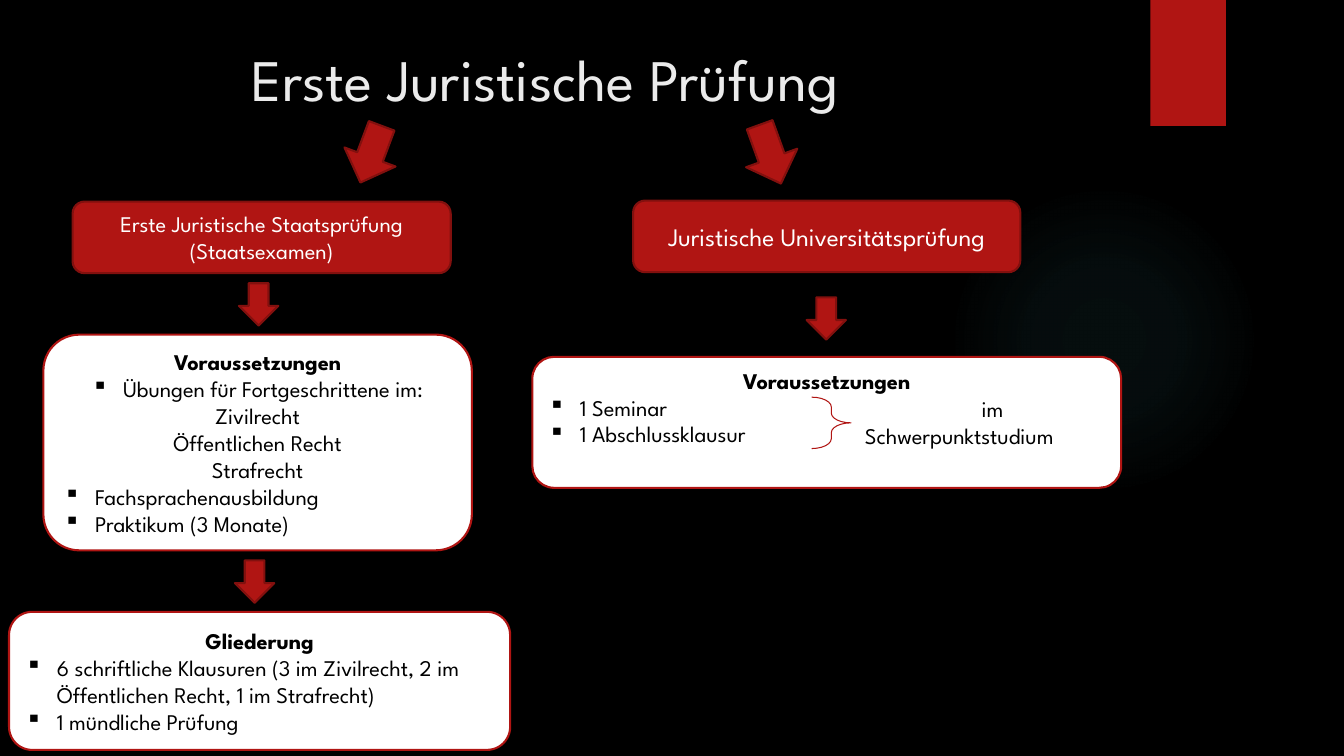
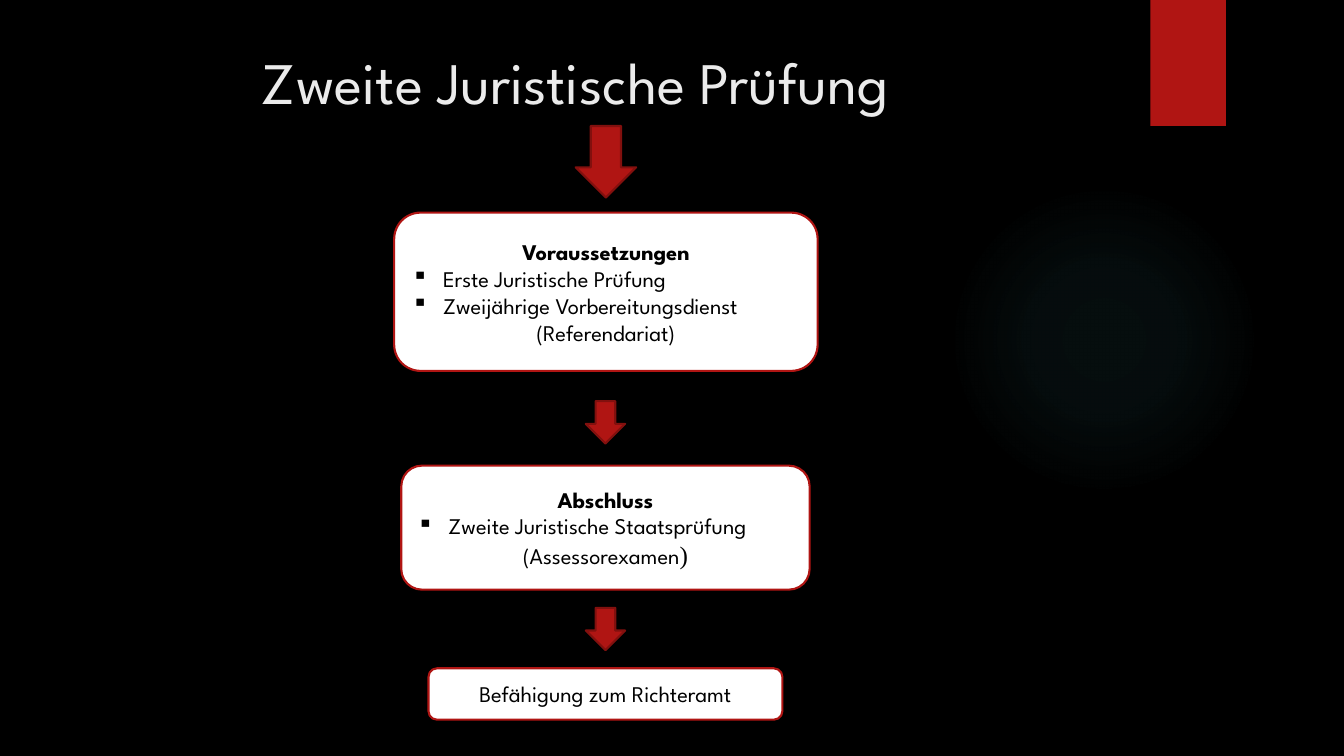
from dataclasses import dataclass

from lxml import etree
from pptx import Presentation
from pptx.dml.color import RGBColor
from pptx.enum.shapes import MSO_SHAPE
from pptx.enum.text import MSO_ANCHOR, PP_ALIGN
from pptx.oxml.ns import qn
from pptx.util import Emu, Pt

PX = 9144  # 100 px to the inch
FONT = "League Spartan"
SERIF = "Times New Roman"
INDENT = 31
COLORS = {
    "back": "000000",
    "title": "EBEBEB",
    "red": "B01513",
    "edge": "82100E",
    "white": "FFFFFF",
    "ink": "000000",
    "glow": "50B9C1",
}
GLOW = ((0, 7), (36, 6), (69, 0))  # position and opacity in percent
LEFT, CENTER = PP_ALIGN.LEFT, PP_ALIGN.CENTER
TOP, MIDDLE = MSO_ANCHOR.TOP, MSO_ANCHOR.MIDDLE
OVAL, RECT = MSO_SHAPE.OVAL, MSO_SHAPE.RECTANGLE
ROUND, DOWN = MSO_SHAPE.ROUNDED_RECTANGLE, MSO_SHAPE.DOWN_ARROW
BRACE = MSO_SHAPE.RIGHT_BRACE


@dataclass(frozen=True)
class Area:
    left: int
    top: int
    width: int
    height: int

    def emu(self) -> list[Emu]:
        return [Emu(n * PX) for n in (self.left, self.top, self.width, self.height)]


@dataclass(frozen=True)
class Line:
    text: str
    align: PP_ALIGN = CENTER
    bullet: bool = False
    bold: bool = False
    tail: str = ""  # closing text in the larger serif font


@dataclass(frozen=True)
class Box:
    area: Area
    lines: tuple[Line, ...]
    fill: str = "white"
    edge: str = "red"
    ink: str = "ink"
    size: int = 16
    bottom: int = 5


@dataclass(frozen=True)
class Arrow:
    left: int
    top: int
    width: int = 39
    height: int = 42
    turn: float = 0


@dataclass(frozen=True)
class Page:
    title: str
    left: int
    top: int
    arrows: tuple[Arrow, ...]
    boxes: tuple[Box, ...]


def head(text: str) -> Line:
    return Line(text, bold=True)


def item(text: str, align: PP_ALIGN = LEFT) -> Line:
    return Line(text, align, bullet=True)


def banner(area: Area, *texts: str, size: int = 16) -> Box:
    return Box(area, tuple(map(Line, texts)), "red", "edge", "white", size)


FIRST = Page(
    "Erste Juristische Prüfung", 240, 37,
    (
        Arrow(341, 123, 54, 60, 20.5),
        Arrow(737, 122, 54, 62, 340.1),
        Arrow(237, 281),
        Arrow(800, 295),
        Arrow(233, 556),
    ),
    (
        banner(Area(72, 200, 375, 71), "Erste Juristische Staatsprüfung", "(Staatsexamen)"),
        banner(Area(628, 199, 384, 71), "Juristische Universitätsprüfung", size=18),
        Box(Area(43, 332, 425, 214), (
            head("Voraussetzungen"),
            item("Übungen für Fortgeschrittene im:", CENTER),
            Line("Zivilrecht"),
            Line("Öffentlichen Recht"),
            Line("Strafrecht"),
            item("Fachsprachenausbildung"),
            item("Praktikum (3 Monate)"),
        )),
        Box(Area(9, 607, 497, 137), (
            head("Gliederung"),
            item("6 schriftliche Klausuren (3 im Zivilrecht, 2 im "
                 "Öffentlichen Recht, 1 im Strafrecht)"),
            item("1 mündliche Prüfung"),
        )),
        Box(Area(528, 354, 584, 130), (
            head("Voraussetzungen"),
            item("1 Seminar"),
            item("1 Abschlussklausur"),
        ), bottom=35),
    ),
)
SECOND = Page(
    "Zweite Juristische Prüfung", 250, 40,
    (Arrow(571, 125, 60, 71), Arrow(581, 398), Arrow(581, 603)),
    (
        Box(Area(391, 211, 420, 157), (
            head("Voraussetzungen"),
            item("Erste Juristische Prüfung"),
            item("Zweijährige Vorbereitungsdienst"),
            Line("(Referendariat)"),
        )),
        Box(Area(398, 462, 405, 123), (
            head("Abschluss"),
            item("Zweite Juristische Staatsprüfung"),
            Line("(Assessorexamen", tail=")"),
        )),
        Box(Area(425, 663, 351, 51), (Line("Befähigung zum Richteramt"),)),
    ),
)


def tint(name: str) -> RGBColor:
    return RGBColor.from_string(COLORS[name])


def style(run, size: int, ink: str, bold: bool = False, face: str = FONT) -> None:
    run.font.name = face
    run.font.size = Pt(size)
    run.font.bold = bold
    run.font.color.rgb = tint(ink)


def shape(slide, kind, area: Area, fill: str = "", edge: str = "", weight: float = 1.5):
    """Draw a preset shape; an empty colour name means none."""
    form = slide.shapes.add_shape(kind, *area.emu())
    form.shadow.inherit = False
    if fill:
        form.fill.solid()
        form.fill.fore_color.rgb = tint(fill)
    else:
        form.fill.background()
    if edge:
        form.line.color.rgb = tint(edge)
        form.line.width = Pt(weight)
    else:
        form.line.fill.background()
    return form


def write(frame, lines: tuple[Line, ...], size: int, ink: str, anchor=TOP) -> None:
    frame.word_wrap = True
    frame.vertical_anchor = anchor
    frame.text = "\n".join(line.text for line in lines)
    for para, line in zip(frame.paragraphs, lines):
        para.alignment = line.align
        if line.bullet:
            props = para._p.get_or_add_pPr()
            props.set("marL", str(INDENT * PX))
            props.set("indent", str(-INDENT * PX))
            etree.SubElement(props, qn("a:buChar"), char="▪")
        style(para.runs[0], size, ink, line.bold)
        if line.tail:
            run = para.add_run()
            run.text = line.tail
            style(run, size + 2, ink, face=SERIF)


def label(slide, area: Area, lines: tuple[Line, ...], size: int, ink: str) -> None:
    write(slide.shapes.add_textbox(*area.emu()).text_frame, lines, size, ink)


def glow(slide) -> None:
    """Draw the faint round light behind the content."""
    form = shape(slide, OVAL, Area(941, 183, 308, 308))
    grad = etree.Element(qn("a:gradFill"), rotWithShape="1")
    stops = etree.SubElement(grad, qn("a:gsLst"))
    for place, alpha in GLOW:
        stop = etree.SubElement(stops, qn("a:gs"), pos=str(place * 1000))
        color = etree.SubElement(stop, qn("a:srgbClr"), val=COLORS["glow"])
        etree.SubElement(color, qn("a:alpha"), val=str(alpha * 1000))
    course = etree.SubElement(grad, qn("a:path"), path="circle")
    sides = dict.fromkeys("ltrb", "50000")
    etree.SubElement(course, qn("a:fillToRect"), **sides)
    props = form._element.spPr
    props.replace(props.find(qn("a:noFill")), grad)


def build(deck, page: Page):
    slide = deck.slides.add_slide(deck.slide_layouts[6])
    slide.background.fill.solid()
    slide.background.fill.fore_color.rgb = tint("back")
    glow(slide)
    shape(slide, RECT, Area(1141, 0, 75, 125), "red")
    label(slide, Area(page.left, page.top, 1029, 153),
          (Line(page.title, LEFT),), 42, "title")
    for arrow in page.arrows:
        area = Area(arrow.left, arrow.top, arrow.width, arrow.height)
        shape(slide, DOWN, area, "red", "edge").rotation = arrow.turn
    for box in page.boxes:
        form = shape(slide, ROUND, box.area, box.fill, box.edge)
        form.text_frame.margin_bottom = Emu(box.bottom * PX)
        write(form.text_frame, box.lines, box.size, box.ink, MIDDLE)
    return slide


def main() -> None:
    deck = Presentation()
    deck.slide_width = Emu(1333 * PX)
    deck.slide_height = Emu(750 * PX)
    first = build(deck, FIRST)
    brace = shape(first, BRACE, Area(805, 394, 39, 51), edge="red", weight=0.75)
    brace.adjustments[0] = 0.25
    label(first, Area(848, 387, 273, 64),
          (Line("im"), Line("Schwerpunktstudium", LEFT)), 16, "ink")
    build(deck, SECOND)
    deck.save("out.pptx")


if __name__ == "__main__":
    main()
